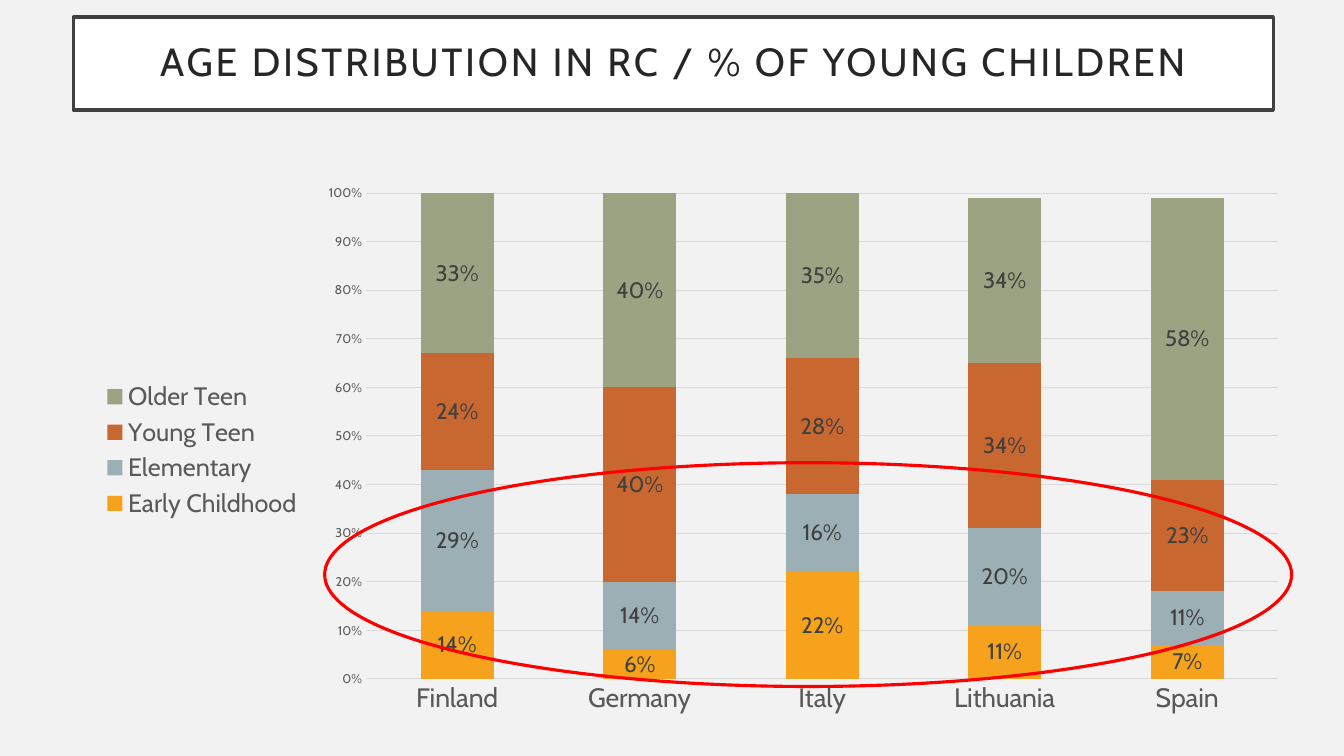
from lxml import etree
from pptx import Presentation
from pptx.chart.data import CategoryChartData
from pptx.dml.color import RGBColor
from pptx.enum.chart import XL_CHART_TYPE, XL_LABEL_POSITION, XL_LEGEND_POSITION, XL_TICK_MARK
from pptx.enum.shapes import MSO_SHAPE
from pptx.enum.text import MSO_ANCHOR, PP_ALIGN
from pptx.oxml.ns import qn
from pptx.util import Inches, Pt

STACKED = XL_CHART_TYPE.COLUMN_STACKED
LABEL_CENTER = XL_LABEL_POSITION.CENTER
LEGEND_LEFT = XL_LEGEND_POSITION.LEFT
NO_TICK = XL_TICK_MARK.NONE
RECTANGLE, OVAL = MSO_SHAPE.RECTANGLE, MSO_SHAPE.OVAL
MIDDLE = MSO_ANCHOR.MIDDLE
CENTER = PP_ALIGN.CENTER

COUNTRIES = ["Finland", "Germany", "Italy", "Lithuania", "Spain"]
AGE_GROUPS = [
    ("Early Childhood", "F6A21D", [0.14, 0.06, 0.22, 0.11, 0.07]),
    ("Elementary", "9BAFB5", [0.29, 0.14, 0.16, 0.20, 0.11]),
    ("Young Teen", "C96731", [0.24, 0.40, 0.28, 0.34, 0.23]),
    ("Older Teen", "9CA383", [0.33, 0.40, 0.35, 0.34, 0.58]),
]
PLOT_LAYOUT = {"x": 0.227, "y": 0.034, "w": 0.753, "h": 0.881}


def color(value):
    return RGBColor.from_string(value)


def style_font(font, size, value):
    font_format = {"name": "Cabin", "size": Pt(size), "bold": False}
    for name, setting in font_format.items():
        setattr(font, name, setting)
    font.color.rgb = color(value)


presentation = Presentation()
presentation.slide_width = Inches(13.33)
presentation.slide_height = Inches(7.5)
slide = presentation.slides.add_slide(presentation.slide_layouts[6])
slide.background.fill.solid()
slide.background.fill.fore_color.rgb = color("F2F2F2")

title = slide.shapes.add_shape(RECTANGLE, Inches(0.73), Inches(0.17), Inches(11.9), Inches(0.92))
title.shadow.inherit = False
title.fill.solid()
title.fill.fore_color.rgb = color("FFFFFF")
title.line.color.rgb = color("404040")
title.line.width = Pt(2.5)
frame_format = {"word_wrap": True, "vertical_anchor": MIDDLE}
for side in ("left", "top", "right", "bottom"):
    frame_format["margin_" + side] = Inches(0.2)
for name, setting in frame_format.items():
    setattr(title.text_frame, name, setting)
paragraph = title.text_frame.paragraphs[0]
paragraph.alignment = CENTER
paragraph.line_spacing = 0.9
run = paragraph.add_run()
run.text = "AGE DISTRIBUTION IN RC / % OF YOUNG CHILDREN"
style_font(run.font, 28, "262626")
run.font._element.set("spc", "200")

chart_data = CategoryChartData(number_format="0%")
chart_data.categories = COUNTRIES
for group_name, group_color, shares in AGE_GROUPS:
    chart_data.add_series(group_name, shares)
chart = slide.shapes.add_chart(
    STACKED, Inches(0.9), Inches(1.73), Inches(12.02), Inches(5.47), chart_data
).chart
style_font(chart.font, 10, "000000")
chart.has_title = False
chart.has_legend = True
chart.legend.position = LEGEND_LEFT
chart.legend.include_in_layout = False
style_font(chart.legend.font, 18, "595959")

plot = chart.plots[0]
plot.gap_width = 150
plot.overlap = 100
plot.vary_by_categories = False
for series, (group_name, group_color, shares) in zip(plot.series, AGE_GROUPS):
    series.format.fill.solid()
    series.format.fill.fore_color.rgb = color(group_color)
    labels = series.data_labels
    label_format = {
        "show_value": True,
        "number_format": "0%",
        "number_format_is_linked": False,
        "position": LABEL_CENTER,
    }
    for name, setting in label_format.items():
        setattr(labels, name, setting)
    style_font(labels.font, 16, "404040")

country_axis, share_axis = chart.category_axis, chart.value_axis
for axis, size in ((country_axis, 19), (share_axis, 9)):
    axis.major_tick_mark = NO_TICK
    axis.minor_tick_mark = NO_TICK
    style_font(axis.tick_labels.font, size, "595959")
share_axis.minimum_scale = 0
share_axis.maximum_scale = 1
share_axis.major_unit = 0.1
share_axis.tick_labels.number_format = "0%"
share_axis.tick_labels.number_format_is_linked = False
share_axis.format.line.fill.background()
for line in (country_axis.format.line, share_axis.major_gridlines.format.line):
    line.color.rgb = color("D9D9D9")
    line.width = Pt(0.75)

plot_area = chart._chartSpace.find(".//" + qn("c:plotArea"))
for old_layout in plot_area.findall(qn("c:layout")):
    plot_area.remove(old_layout)
layout = etree.Element(qn("c:layout"))
manual_layout = etree.SubElement(layout, qn("c:manualLayout"))
layout_values = {"layoutTarget": "inner", "xMode": "edge", "yMode": "edge", **PLOT_LAYOUT}
for name, setting in layout_values.items():
    etree.SubElement(manual_layout, qn("c:" + name)).set("val", str(setting))
plot_area.insert(0, layout)

highlight = slide.shapes.add_shape(OVAL, Inches(3.22), Inches(4.59), Inches(9.59), Inches(2.22))
highlight.shadow.inherit = False
highlight.fill.background()
highlight.line.color.rgb = color("FF0000")
highlight.line.width = Pt(2.25)

presentation.save("out.pptx")
